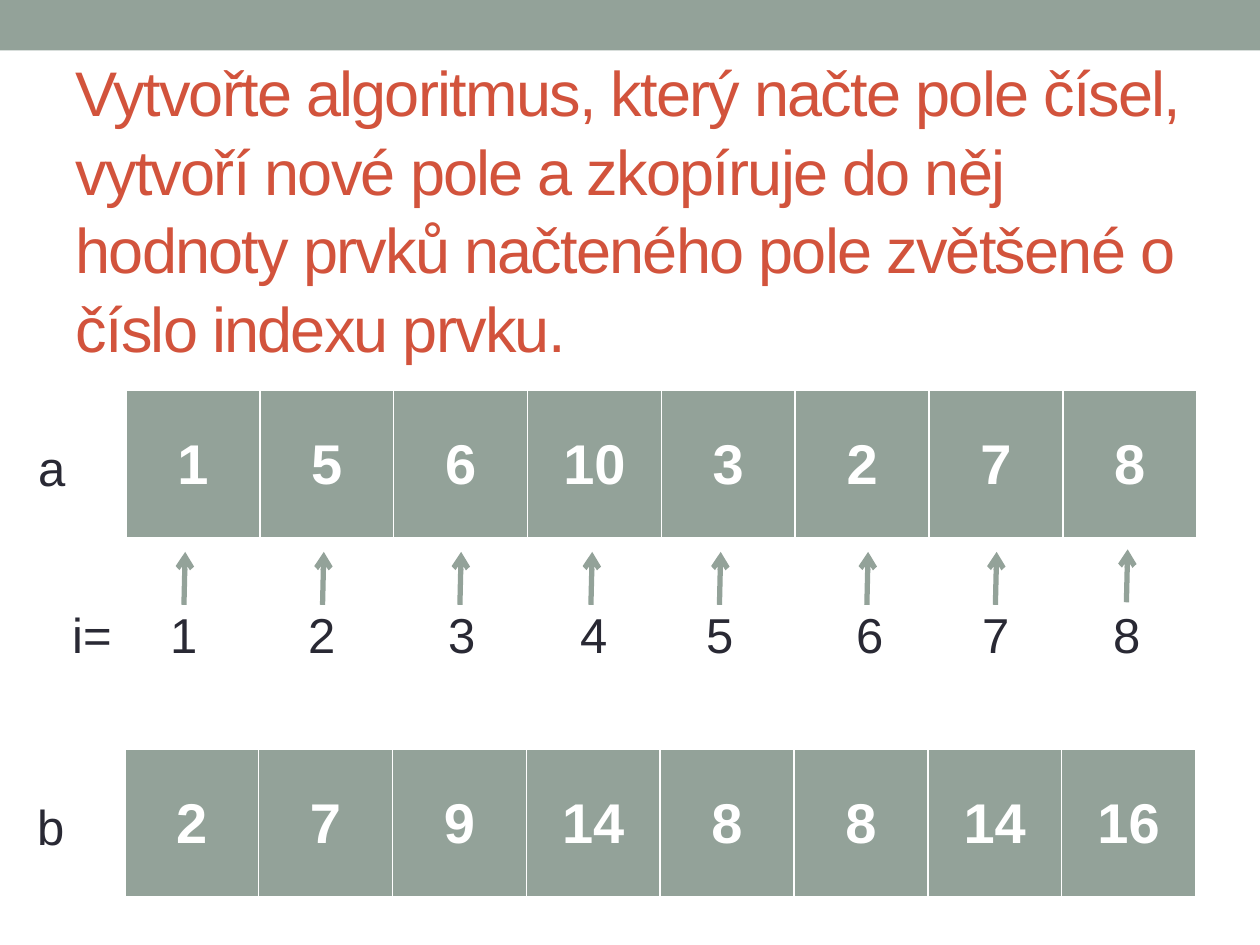
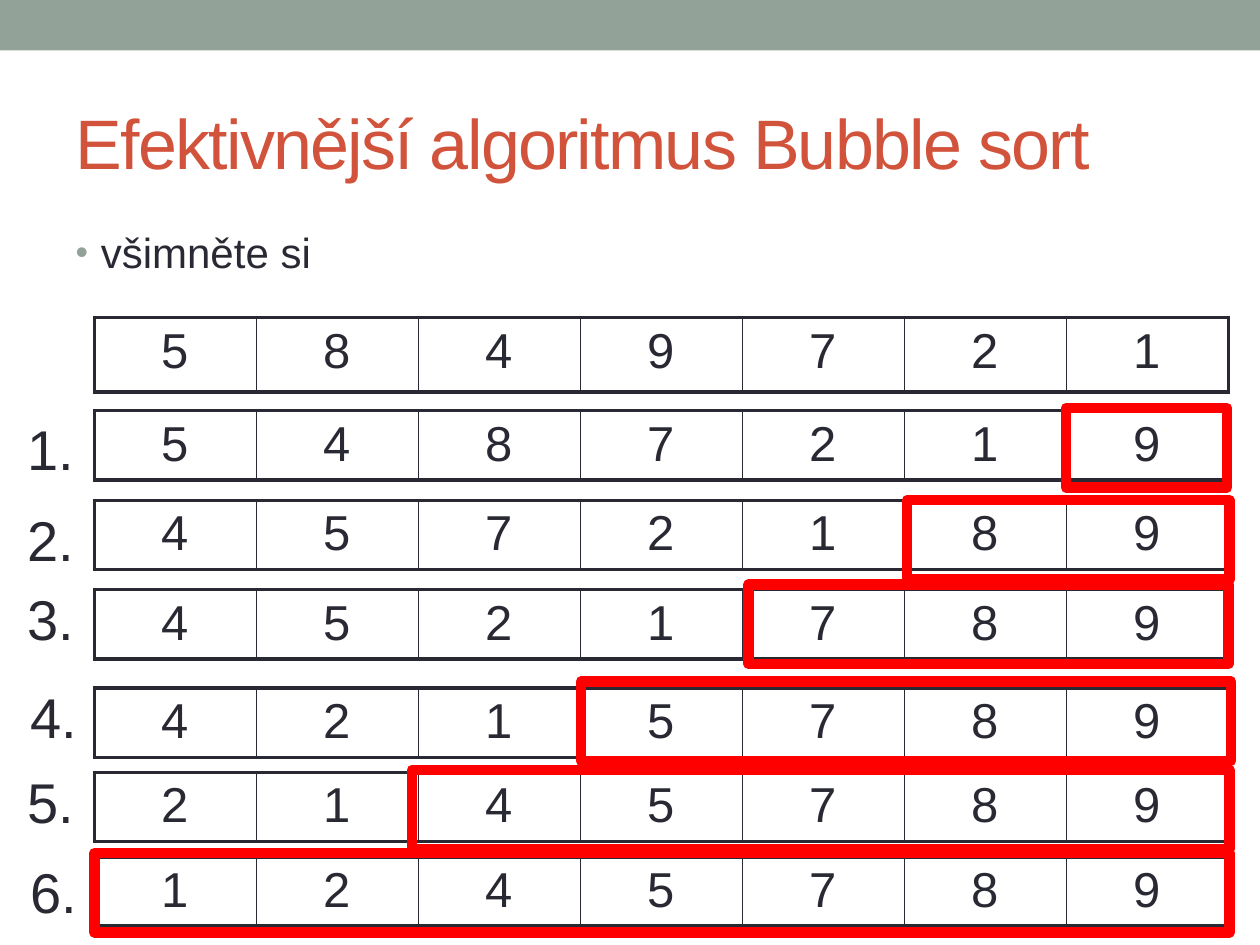
from lxml.etree import SubElement as Sub
from pptx import Presentation
from pptx.dml.color import RGBColor
from pptx.enum.shapes import MSO_CONNECTOR as Conn, MSO_SHAPE as Shape
from pptx.enum.text import MSO_ANCHOR as Anchor, MSO_AUTO_SIZE as Fit, PP_ALIGN as Align
from pptx.oxml.ns import qn
from pptx.util import Inches, Pt

SAGE, RUST, INK, RED, WHITE = "93A299", "D2533C", "292934", "FF0000", "FFFFFF"


def color(hex):
    """Turn a hex string into a colour."""
    return RGBColor.from_string(hex)


def box(*sizes):
    """Turn inches into lengths."""
    return [Inches(size) for size in sizes]


def write(frame, text, size=28, ink=INK, bold=False, align=Align.LEFT, gap=None, lead=None):
    """Fill a text frame with one formatted paragraph."""
    par = frame.paragraphs[0]
    par.alignment = align
    if lead:
        par.line_spacing = lead
    run = par.add_run()
    run.text = text
    font = run.font
    font.name, font.size, font.bold = "Arial", Pt(size), bold
    font.color.rgb = color(ink)
    if gap:
        font._element.set("spc", str(gap))
    return par


def place(holder, *area):
    """Move a placeholder and return its text frame."""
    holder.left, holder.top, holder.width, holder.height = box(*area)
    frame = holder.text_frame
    frame.word_wrap, frame.auto_size = True, Fit.NONE
    return frame


def title(slide, text, high, size, lead=None):
    """Set the slide title."""
    frame = place(slide.shapes.title, 0.5, 0.58, 9, high)
    frame.vertical_anchor = Anchor.MIDDLE
    write(frame, text, size=size, ink=RUST, gap=-100, lead=lead)


def bullet(slide, text):
    """Fill the body with one bulleted line."""
    frame = place(slide.placeholders[1], 0.5, 1.75, 9, 5.33)
    frame.vertical_anchor = Anchor.TOP
    props = write(frame, text, size=24)._p.get_or_add_pPr()
    props.set("marL", str(Inches(0.2)))
    props.set("indent", str(Inches(-0.2)))
    Sub(Sub(props, qn("a:buClr")), qn("a:srgbClr"), val=SAGE)
    Sub(props, qn("a:buSzPct"), val="85000")
    Sub(props, qn("a:buFont"), typeface="Arial")
    Sub(props, qn("a:buChar"), char="•")


def label(slide, text, left, top, wide, high, **style):
    """Add a text box."""
    frame = slide.shapes.add_textbox(*box(left, top, wide, high)).text_frame
    frame.word_wrap, frame.auto_size = True, Fit.SHAPE_TO_FIT_TEXT
    write(frame, text, **style)


def rect(slide, *area, fill=None, line=None, width=1):
    """Add a plain rectangle."""
    shape = slide.shapes.add_shape(Shape.RECTANGLE, *box(*area))
    shape.shadow.inherit = False
    if fill:
        shape.fill.solid()
        shape.fill.fore_color.rgb = color(fill)
    else:
        shape.fill.background()
    if line:
        shape.line.color.rgb = color(line)
        shape.line.width = Pt(width)
    else:
        shape.line.fill.background()
    return shape


def arrow(slide, *ends):
    """Add an arrow from one point to another."""
    line = slide.shapes.add_connector(Conn.STRAIGHT, *box(*ends))
    line.line.color.rgb = color(SAGE)
    line.line.width = Pt(3)
    Sub(line.line._get_or_add_ln(), qn("a:tailEnd"), type="arrow")
    Sub(line.element.spPr, qn("a:effectLst"))


def edge(cell, ink, **widths):
    """Draw the cell borders L, R, T and B."""
    props = cell._tc.get_or_add_tcPr()
    for side, width in widths.items():
        line = Sub(props, qn(f"a:ln{side}"), w=str(Pt(width)))
        Sub(Sub(line, qn("a:solidFill")), qn("a:srgbClr"), val=ink)


def array(slide, values, left, top, wide, high, rim, outer, fill=None, **style):
    """Show values as a table of one row."""
    count = len(values)
    table = slide.shapes.add_table(1, count, *box(left, top, wide, high)).table
    table.first_row = table.horz_banding = False
    for spot, value in enumerate(values):
        cell = table.cell(0, spot)
        edge(cell, rim, L=outer["L"] if spot == 0 else 1,
             R=outer["R"] if spot == count - 1 else 1, T=outer["T"], B=outer["B"])
        if fill:
            cell.fill.solid()
            cell.fill.fore_color.rgb = color(fill)
            cell.vertical_anchor = Anchor.MIDDLE
        else:
            cell.fill.background()
        write(cell.text_frame, str(value), align=Align.CENTER, **style)


def bubble(values):
    """Return the values after one pass of bubble sort."""
    values = list(values)
    for i in range(len(values) - 1):
        if values[i] > values[i + 1]:
            values[i], values[i + 1] = values[i + 1], values[i]
    return values


def band(deck, slide):
    """Put the top band on the slide master."""
    bar = rect(slide, 0, 0, 10, 0.4, fill=SAGE)
    deck.slide_master.shapes.element.insert(2, bar.element)


def copy_slide(slide):
    """Show an array and its copy raised by the index."""
    title(slide, "Vytvořte algoritmus, který načte pole čísel, vytvoří nové pole a zkopíruje "
          "do něj hodnoty prvků načteného pole zvětšené o číslo indexu prvku.", 2.14, 36, lead=1.04)
    first = [1, 5, 6, 10, 3, 2, 7, 8]
    raised = [value + i for i, value in enumerate(first, 1)]
    outer = dict(L=1, R=1, T=1, B=3)
    for name, values, left, top in (("a", first, 1, 3.1), ("b", raised, 0.99, 5.95)):
        array(slide, values, left, top, 8.5, 1.18, WHITE, outer,
              fill=SAGE, size=32, ink=WHITE, bold=True)
        label(slide, name, left - 0.79, top + 0.32, 0.63, 0.57)
    label(slide, "i=", 0.48, 4.75, 0.71, 0.57)
    lefts = [1.23, 2.32, 3.43, 4.48, 5.48, 6.67, 7.67, 8.71]
    tails = [1.46, 2.56, 3.65, 4.69, 5.71, 6.88, 7.9, 8.94]
    for i, (left, x) in enumerate(zip(lefts, tails), 1):
        label(slide, str(i), left, 4.75, 0.47, 0.57, align=Align.CENTER)
        lift = 0.02 if i == len(lefts) else 0
        arrow(slide, x, 4.8 - lift, x + 0.01, 4.38 - lift)


def sort_slide(slide):
    """Show each pass of bubble sort with its sorted part framed."""
    title(slide, "Efektivnější algoritmus Bubble sort", 1.08, 40)
    bullet(slide, "všimněte si")
    outer = dict(L=2.25, R=2.25, T=2.25, B=2.25)
    values = [5, 8, 4, 9, 7, 2, 1]
    array(slide, values, 0.75, 2.52, 9, 0.59, INK, outer)
    tops = [3.26, 3.97, 4.68, 5.46, 6.13, 6.8]
    for top in tops:
        values = bubble(values)
        array(slide, values, 0.75, top, 9, 0.55, INK, outer)
    frames = [(8.46, 3.24, 1.28), (7.2, 3.97, 2.56), (5.94, 4.64, 3.81),
              (4.61, 5.41, 5.16), (3.27, 6.11, 6.49), (0.75, 6.77, 9.01)]
    for left, top, wide in frames:
        rect(slide, left, top, wide, 0.63, line=RED, width=6)
    marks = [(0.12, 3.24), (0.12, 3.96), (0.12, 4.59), (0.14, 5.37), (0.12, 6.04), (0.14, 6.76)]
    for i, (left, top) in enumerate(marks, 1):
        label(slide, f"{i}.", left, top, 0.61, 0.64, size=32)


def main():
    """Build and save the deck."""
    deck = Presentation()
    deck.slide_width, deck.slide_height = box(10, 7.5)
    copy = deck.slides.add_slide(deck.slide_layouts[5])
    band(deck, copy)
    copy_slide(copy)
    sort_slide(deck.slides.add_slide(deck.slide_layouts[1]))
    deck.save("out.pptx")


if __name__ == "__main__":
    main()
